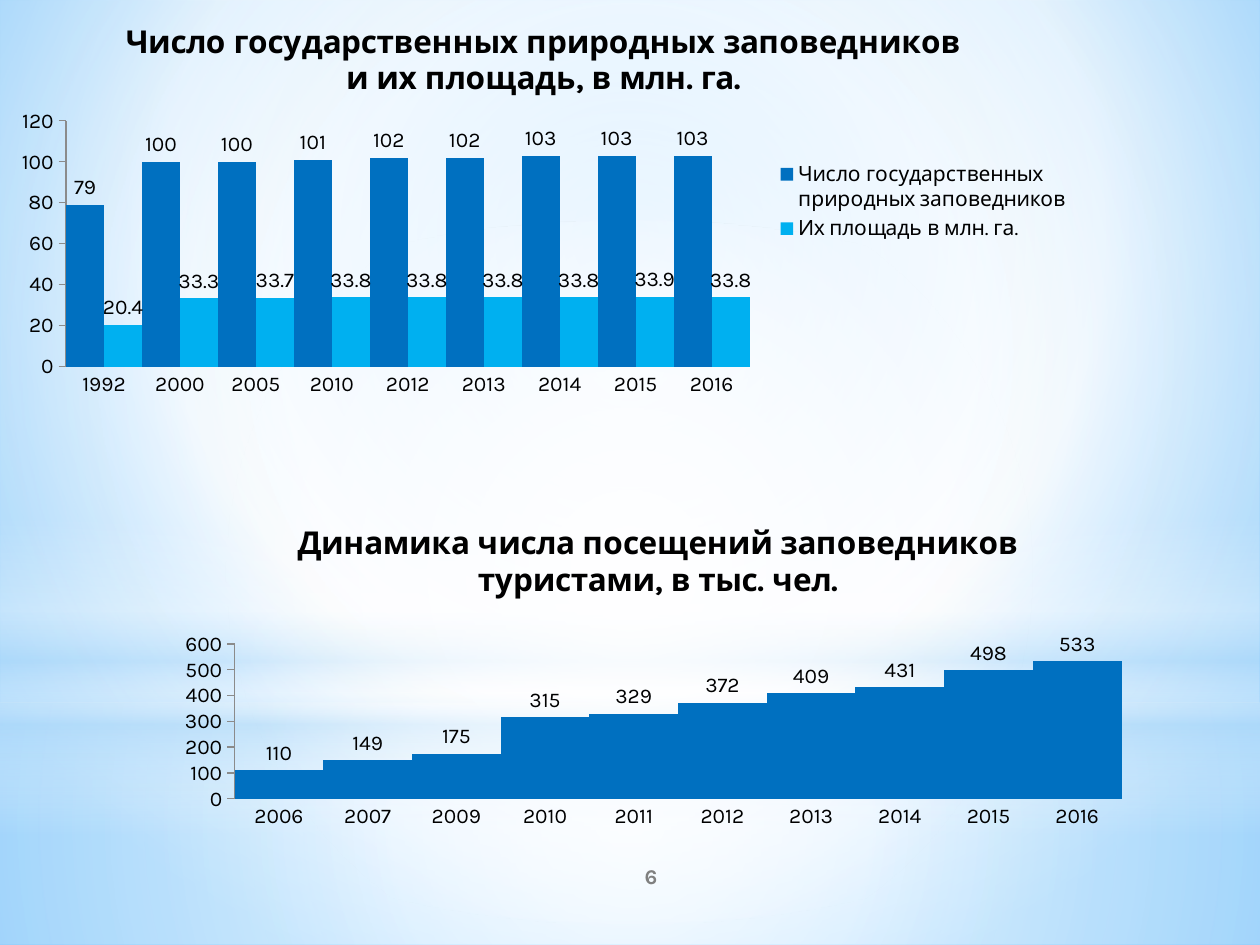
"""Build the slide on nature reserves: their number, area and visitors."""
from dataclasses import dataclass
from pptx import Presentation, oxml
from pptx import util as u
from pptx.chart import data
from pptx.dml import color
from pptx.enum import chart as charts, shapes, text
from pptx.oxml import ns


@dataclass(frozen=True)
class Theme:
    font: str = "Karla"
    ink: str = "000000"
    muted: str = "808080"
    axis: str = "8B8B8B"
    blue: str = "0070C0"
    cyan: str = "00B0F0"
    white: str = "FFFFFF"
    haze: str = "B4DCFA"
    sky: str = "9ED5FF"
    deep_sky: str = "5BB9FF"
    title: int = 18
    body: int = 12


def px(length):
    return u.Emu(round(length * 914400 / 126))


def assign(target, values):
    for name, value in values.items():
        setattr(target, name, value)


def rgb(code):
    return color.RGBColor.from_string(code)


def gradient(stops, center=None, angle=90):
    marks = "".join(
        f'<a:gs pos="{place * 1000}"><a:srgbClr val="{code}">'
        f'<a:alpha val="{alpha * 1000}"/></a:srgbClr></a:gs>'
        for place, code, alpha in stops)
    if center:
        sides = " ".join(f'{side}="{value * 1000}"' for side, value in zip("ltrb", center))
        direction = f'<a:path path="circle"><a:fillToRect {sides}/></a:path>'
    else:
        direction = f'<a:lin ang="{angle * 60000}" scaled="0"/>'
    return oxml.parse_xml(f'<a:gradFill {ns.nsdecls("a")} rotWithShape="1">'
                          f'<a:gsLst>{marks}</a:gsLst>{direction}</a:gradFill>')


class Slide:
    def __init__(self, deck, theme):
        self.theme = theme
        self.page = deck.slides.add_slide(deck.slide_layouts[6])

    def style(self, font, size, code, bold=False):
        assign(font, {"name": self.theme.font, "size": u.Pt(size), "bold": bold})
        font.color.rgb = rgb(code)

    def paint(self, fill, element, paint):
        fill.gradient()
        old = element.find(".//" + ns.qn("a:gradFill"))
        old.getparent().replace(old, paint)

    def background(self, paint):
        self.paint(self.page.background.fill, self.page.element, paint)

    def glow(self, kind, frame, paint):
        shape = self.page.shapes.add_shape(kind, *map(px, frame))
        shape.shadow.inherit = False
        shape.line.fill.background()
        self.paint(shape.fill, shape.element, paint)

    def label(self, frame, words):
        box = self.page.shapes.add_textbox(*map(px, frame))
        assign(box.text_frame, {"word_wrap": True, "vertical_anchor": text.MSO_ANCHOR.MIDDLE})
        para = box.text_frame.paragraphs[0]
        para.alignment = text.PP_ALIGN.CENTER
        span = para.add_run()
        span.text = words
        self.style(span.font, self.theme.body, self.theme.muted, True)

    def layout(self, parent, place, inner=False):
        target = '<c:layoutTarget val="inner"/>' if inner else ""
        modes = '<c:xMode val="edge"/><c:yMode val="edge"/>'
        sizes = "".join(f'<c:{side} val="{value}"/>' for side, value in zip("xywh", place))
        fresh = oxml.parse_xml(f'<c:layout {ns.nsdecls("c")}><c:manualLayout>{target}'
                               f'{modes}{sizes}</c:manualLayout></c:layout>')
        old = parent.find(ns.qn("c:layout"))
        if old is not None:
            parent.remove(old)
        legend_position = parent.find(ns.qn("c:legendPos"))
        if legend_position is not None:
            legend_position.addnext(fresh)
        else:
            parent.insert(0, fresh)

    def columns(self, frame, title, years, series, top, step, plot_area, legend_area=None):
        theme = self.theme
        source = data.CategoryChartData()
        source.categories = years
        for name, values, _ in series:
            source.add_series(name, values)
        chart = self.page.shapes.add_chart(
            charts.XL_CHART_TYPE.COLUMN_CLUSTERED, *map(px, frame), source).chart
        self.style(chart.font, theme.body, theme.ink)
        assign(chart, {"has_title": True, "has_legend": bool(legend_area)})
        para = chart.chart_title.text_frame.paragraphs[0]
        span = para.add_run()
        span.text = title
        self.style(span.font, theme.title, theme.ink, True)
        chart.chart_title.include_in_layout = False

        plot = chart.plots[0]
        assign(plot, {"gap_width": 0, "overlap": 0, "vary_by_categories": False})
        for bars, (_, _, code) in zip(plot.series, series):
            bars.format.fill.solid()
            bars.format.fill.fore_color.rgb = rgb(code)
            assign(bars.data_labels, {"show_value": True,
                                      "position": charts.XL_LABEL_POSITION.OUTSIDE_END})
            self.style(bars.data_labels.font, theme.body, theme.ink)

        ticks = charts.XL_TICK_MARK
        assign(chart.value_axis, {"minimum_scale": 0, "maximum_scale": top, "major_unit": step})
        for axis, mark in ((chart.category_axis, ticks.NONE), (chart.value_axis, ticks.OUTSIDE)):
            assign(axis, {"has_major_gridlines": False, "major_tick_mark": mark,
                          "minor_tick_mark": ticks.NONE})
            axis.format.line.color.rgb = rgb(theme.axis)
            self.style(axis.tick_labels.font, theme.body, theme.ink)

        self.layout(chart.element.find(".//" + ns.qn("c:plotArea")), plot_area, True)
        if legend_area:
            assign(chart.legend, {"position": charts.XL_LEGEND_POSITION.RIGHT,
                                  "include_in_layout": False})
            self.style(chart.legend.font, theme.body, theme.ink)
            self.layout(chart.element.find(".//" + ns.qn("c:legend")), legend_area)


def main():
    deck = Presentation()
    assign(deck, {"slide_width": px(1260), "slide_height": px(945)})
    theme = Theme()
    slide = Slide(deck, theme)
    white, haze = theme.white, theme.haze
    middle = (50, 50, 50, 50)
    rectangle, oval = shapes.MSO_SHAPE.RECTANGLE, shapes.MSO_SHAPE.OVAL

    slide.background(gradient(
        [(0, theme.sky, 100), (60, white, 100), (100, theme.deep_sky, 100)], (20, 10, 20, 60)))
    slide.glow(rectangle, (0, 703, 1260, 242),
               gradient([(0, white, 91), (37, white, 76), (100, haze, 79)], middle))
    slide.glow(rectangle, (0, 0, 1260, 703),
               gradient([(0, white, 89), (48, white, 62), (100, haze, 79)], middle))
    slide.glow(rectangle, (0, 519, 1260, 315),
               gradient([(0, white, 0), (29, white, 30), (45, haze, 40),
                         (55, white, 26), (65, haze, 60), (100, white, 0)]))
    slide.glow(oval, (0, 221, 1260, 703),
               gradient([(0, white, 100), (56, white, 0)], middle))
    slide.label((525, 851, 252, 50), "6")

    slide.columns(
        (1, 0, 1085, 403),
        "Число государственных природных заповедников и их площадь, в млн. га.",
        ["1992", "2000", "2005", "2010", "2012", "2013", "2014", "2015", "2016"],
        [("Число государственных природных заповедников",
          (79, 100, 100, 101, 102, 102, 103, 103, 103), theme.blue),
         ("Их площадь в млн. га.",
          (20.4, 33.3, 33.7, 33.8, 33.8, 33.8, 33.8, 33.9, 33.8), theme.cyan)],
        120, 20, (0.06, 0.3, 0.63, 0.61), (0.71, 0.39, 0.28, 0.22))
    slide.columns(
        (154, 503, 1008, 344),
        "Динамика числа посещений заповедников туристами, в тыс. чел.",
        ["2006", "2007", "2009", "2010", "2011", "2012", "2013", "2014", "2015", "2016"],
        [("Series 1", (110, 149, 175, 315, 329, 372, 409, 431, 498, 533), theme.blue)],
        600, 100, (0.08, 0.41, 0.88, 0.45))
    deck.save("out.pptx")


if __name__ == "__main__":
    main()
